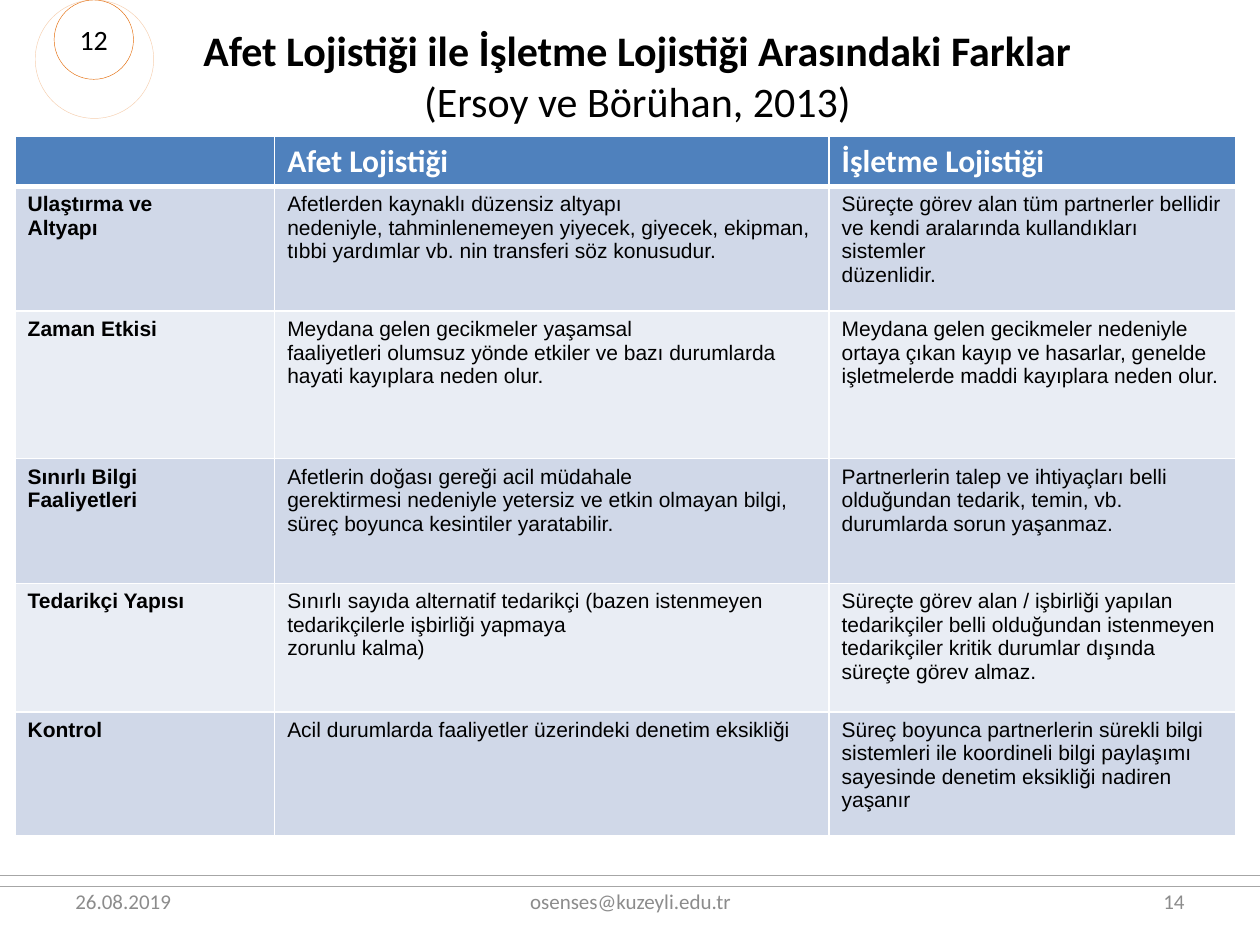
from dataclasses import dataclass
from typing import Any

from lxml.etree import SubElement
from pptx import Presentation
from pptx.dml.color import RGBColor
from pptx.enum.shapes import MSO_CONNECTOR as Connector, MSO_SHAPE as Shape
from pptx.enum.text import MSO_ANCHOR as Anchor, PP_ALIGN as Align
from pptx.oxml import parse_xml
from pptx.oxml.ns import nsdecls, qn
from pptx.util import Inches, Pt

TITLE = "Afet Lojistiği ile İşletme Lojistiği Arasındaki Farklar"
CITATION = "(Ersoy ve Börühan, 2013)"
COLUMN_WIDTHS = [2.06, 4.4, 3.23]
ROW_HEIGHTS = [0.4, 0.99, 1.17, 0.99, 1.02, 0.98]
COMPARISON = [
    ["", "Afet Lojistiği", "İşletme Lojistiği"],
    ["Ulaştırma ve\nAltyapı",
     "Afetlerden kaynaklı düzensiz altyapı\nnedeniyle, tahminlenemeyen yiyecek, giyecek, "
     "ekipman, tıbbi yardımlar vb. nin transferi söz konusudur.",
     "Süreçte görev alan tüm partnerler bellidir ve kendi aralarında kullandıkları "
     "sistemler\ndüzenlidir."],
    ["Zaman Etkisi",
     "Meydana gelen gecikmeler yaşamsal\nfaaliyetleri olumsuz yönde etkiler ve bazı "
     "durumlarda hayati kayıplara neden olur.",
     "Meydana gelen gecikmeler nedeniyle ortaya çıkan kayıp ve hasarlar, genelde "
     "işletmelerde maddi kayıplara neden olur."],
    ["Sınırlı Bilgi\nFaaliyetleri",
     "Afetlerin doğası gereği acil müdahale\ngerektirmesi nedeniyle yetersiz ve etkin "
     "olmayan bilgi, süreç boyunca kesintiler yaratabilir.",
     "Partnerlerin talep ve ihtiyaçları belli\nolduğundan tedarik, temin, vb. durumlarda "
     "sorun yaşanmaz."],
    ["Tedarikçi Yapısı",
     "Sınırlı sayıda alternatif tedarikçi (bazen istenmeyen tedarikçilerle işbirliği "
     "yapmaya\nzorunlu kalma)",
     "Süreçte görev alan / işbirliği yapılan\ntedarikçiler belli olduğundan istenmeyen "
     "tedarikçiler kritik durumlar dışında süreçte görev almaz."],
    ["Kontrol",
     "Acil durumlarda faaliyetler üzerindeki denetim eksikliği",
     "Süreç boyunca partnerlerin sürekli bilgi sistemleri ile koordineli bilgi paylaşımı "
     "sayesinde denetim eksikliği nadiren yaşanır"],
]
FOOTER = [
    (0.5, 2.33, "26.08.2019", Align.LEFT),
    (3.42, 3.17, "osenses@kuzeyli.edu.tr", Align.CENTER),
    (7.17, 2.33, "14", Align.RIGHT),
]


def color(value):
    """Turn a hex string into a colour."""
    return RGBColor.from_string(value)


@dataclass
class SlideBuilder:
    """Hold the style and the current slide."""

    slide: Any
    heading_font: str = "Calibri"
    body_font: str = "Arial"
    ink: str = "000000"
    paper: str = "FFFFFF"
    muted: str = "8C8C8C"
    rule: str = "A6A6A6"
    accent: str = "E46C0A"
    header: str = "4F81BD"
    bands: tuple = ("D0D8E8", "E9EDF4")

    def fill_text(self, frame, lines, align=Align.LEFT, ink=None, **formats):
        """Set each line with its bold flag as one paragraph."""
        frame.word_wrap = True
        for index, (text, bold) in enumerate(lines):
            paragraph = frame.paragraphs[0] if index == 0 else frame.add_paragraph()
            paragraph.alignment = align
            font = paragraph.font
            if text:
                run = paragraph.add_run()
                run.text = text
                font = run.font
            for name, value in {**formats, "bold": bold}.items():
                setattr(font, name, value)
            font.color.rgb = color(ink or self.ink)

    def text(self, box, lines, align, size, ink=None):
        """Add a vertically centred text box."""
        frame = self.slide.shapes.add_textbox(*map(Inches, box)).text_frame
        frame.vertical_anchor = Anchor.MIDDLE
        self.fill_text(frame, lines, align, ink, name=self.heading_font, size=Pt(size))

    def line(self, top):
        """Add a thin rule across the slide."""
        line = self.slide.shapes.add_connector(
            Connector.STRAIGHT, 0, Inches(top), Inches(10), Inches(top))
        line.line.color.rgb = color(self.rule)
        line.line.width = Pt(0.25)
        SubElement(line._element.spPr, qn("a:effectLst"))

    def circle(self, left, size, fill=None, opacity=None, label=None):
        """Add an outlined circle at the top edge."""
        circle = self.slide.shapes.add_shape(
            Shape.OVAL, Inches(left), 0, Inches(size), Inches(size))
        circle.shadow.inherit = False
        if fill:
            circle.fill.solid()
            circle.fill.fore_color.rgb = color(fill)
        else:
            circle.fill.background()
        circle.line.color.rgb = color(self.accent)
        circle.line.width = Pt(0.25)
        if opacity:
            tint = circle._element.spPr.find(f"{qn('a:ln')}//{qn('a:srgbClr')}")
            SubElement(tint, qn("a:alpha"), val=str(opacity * 1000))
        if label:
            frame = circle.text_frame
            frame.vertical_anchor = Anchor.MIDDLE
            for side in ("left", "right", "top", "bottom"):
                setattr(frame, f"margin_{side}", 0)
            self.fill_text(frame, [(label, False)], Align.CENTER,
                           name=self.heading_font, size=Pt(16))

    def borders(self, cell, widths):
        """Draw the four borders of a cell."""
        properties = cell._tc.get_or_add_tcPr()
        for index, (side, width) in enumerate(widths.items()):
            properties.insert(index, parse_xml(
                f'<a:ln{side} {nsdecls("a")} w="{Pt(width)}"><a:solidFill>'
                f'<a:srgbClr val="{self.paper}"/></a:solidFill></a:ln{side}>'))

    def table(self, left, top, widths, heights, rows):
        """Add a banded table with a header row and bold row labels."""
        table = self.slide.shapes.add_table(
            len(rows), len(widths), Inches(left), Inches(top),
            Inches(sum(widths)), Inches(sum(heights))).table
        for column, width in zip(table.columns, widths):
            column.width = Inches(width)
        for row, height in zip(table.rows, heights):
            row.height = Inches(height)
        for row_index, texts in enumerate(rows):
            is_header = row_index == 0
            fill = self.header if is_header else self.bands[(row_index - 1) % 2]
            ink = self.paper if is_header else self.ink
            formats = {"name": self.heading_font if is_header else self.body_font,
                       "size": Pt(18 if is_header else 12)}
            for column_index, text in enumerate(texts):
                cell = table.cell(row_index, column_index)
                cell.fill.solid()
                cell.fill.fore_color.rgb = color(fill)
                bold = is_header or column_index == 0
                lines = [(part, bold) for part in text.split("\n")]
                self.fill_text(cell.text_frame, lines, ink=ink, **formats)
                self.borders(cell, {"L": 1, "R": 1, "T": 3 if row_index == 1 else 1,
                                    "B": 3 if is_header else 1})


def main():
    """Build and save the slide."""
    presentation = Presentation()
    presentation.slide_width, presentation.slide_height = Inches(10), Inches(7.5)
    builder = SlideBuilder(presentation.slides.add_slide(presentation.slide_layouts[6]))
    for top in (7.03, 6.95):
        builder.line(top)
    builder.text((0.98, 0.44, 8.16, 0.31), [(TITLE, True), (CITATION, False)],
                 Align.CENTER, 24)
    builder.table(0.12, 1.08, COLUMN_WIDTHS, ROW_HEIGHTS, COMPARISON)
    builder.circle(0.28, 0.94, opacity=33)
    builder.circle(0.43, 0.63, fill=builder.paper, label="12")
    for left, width, text, align in FOOTER:
        builder.text((left, 6.95, width, 0.4), [(text, False)], align, 12, builder.muted)
    presentation.save("out.pptx")


if __name__ == "__main__":
    main()
